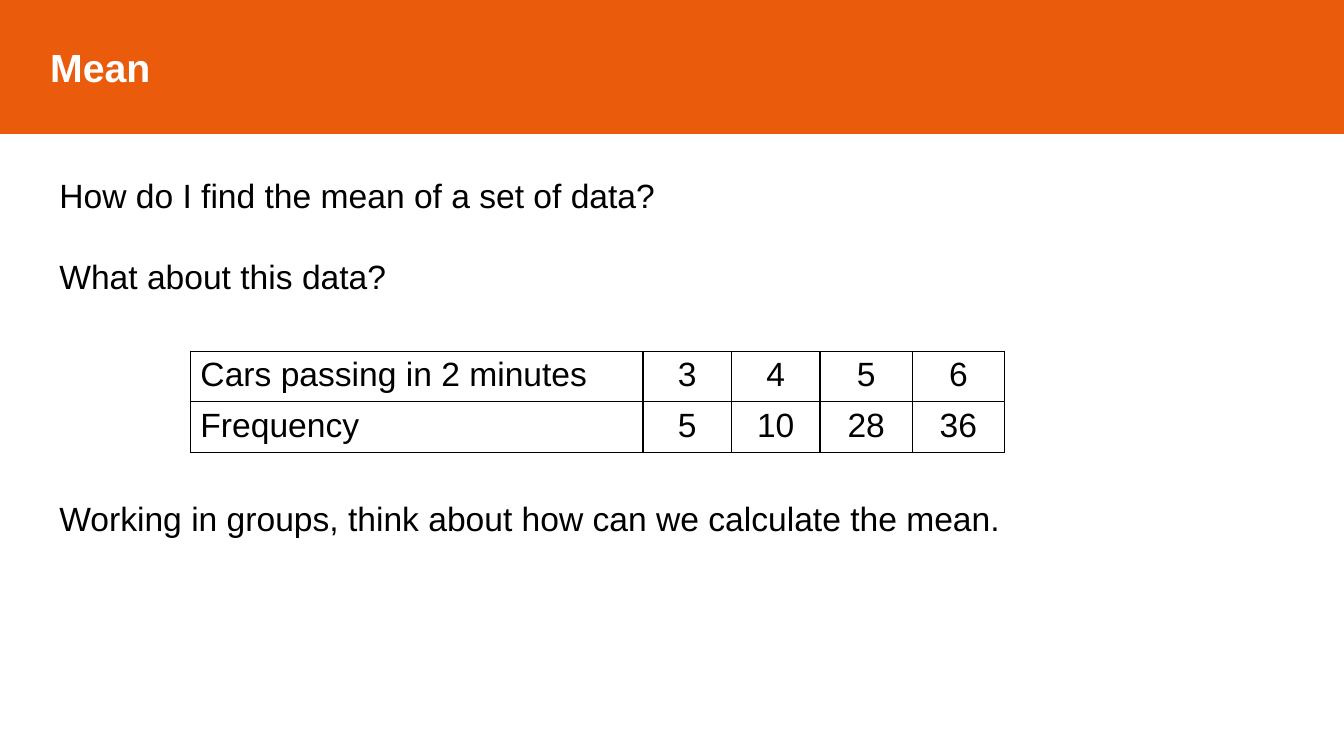
from lxml import etree
from pptx import Presentation
from pptx.dml.color import RGBColor
from pptx.enum.shapes import MSO_SHAPE
from pptx.enum.text import MSO_ANCHOR, MSO_AUTO_SIZE, PP_ALIGN
from pptx.oxml.ns import qn
from pptx.util import Pt

RECTANGLE = MSO_SHAPE.RECTANGLE
MIDDLE = MSO_ANCHOR.MIDDLE
GROW = MSO_AUTO_SIZE.SHAPE_TO_FIT_TEXT
LEFT, CENTER = PP_ALIGN.LEFT, PP_ALIGN.CENTER

COLORS = {"banner": "EA5B0C", "paper": "FFFFFF", "ink": "000000"}
BODY = {"name": "Arial", "size": Pt(24)}
HEADING = {"name": "Arial", "size": Pt(28), "bold": True}

QUESTIONS = [
    ("How do I find the mean of a set of data?", 0),
    ("What about this data?", 28.7),
    ("Working in groups, think about how can we calculate the mean.", 144),
]
FREQUENCIES = [
    ("Cars passing in 2 minutes", "3", "4", "5", "6"),
    ("Frequency", "5", "10", "28", "36"),
]
COLUMN_WIDTHS = [323.3, 63.2, 63.2, 66.2, 65.4]
ROW_HEIGHT = 29.5


def rgb(color):
    """Return the named colour."""
    return RGBColor.from_string(COLORS[color])


def write(paragraph, wording, style, color, align=LEFT):
    """Put one formatted run into a paragraph."""
    paragraph.alignment = align
    run = paragraph.add_run()
    run.text = wording
    for attribute, value in style.items():
        setattr(run.font, attribute, value)
    run.font.color.rgb = rgb(color)


def add_banner(slide, title):
    """Add the full-width title band."""
    banner = slide.shapes.add_shape(RECTANGLE, 0, 0, Pt(960), Pt(95))
    banner.shadow.inherit = False
    banner.fill.solid()
    banner.fill.fore_color.rgb = rgb("banner")
    banner.line.color.rgb = rgb("banner")
    banner.line.width = Pt(1)
    banner.text_frame.vertical_anchor = MIDDLE
    heading = banner.text_frame.paragraphs[0]
    write(heading, title, HEADING, "paper")
    heading._p.get_or_add_pPr().set("marL", str(Pt(28.8)))


def add_questions(slide, questions):
    """Add the prompts, each with its gap above."""
    body = slide.shapes.add_textbox(Pt(35.3), Pt(121.7), Pt(907), Pt(385)).text_frame
    body.word_wrap = True
    body.auto_size = GROW
    for index, (wording, gap) in enumerate(questions):
        prompt = body.add_paragraph() if index else body.paragraphs[0]
        prompt.space_before = Pt(gap)
        write(prompt, wording, BODY, "ink")


def add_borders(cell):
    """Draw a thin line on all four sides of a cell."""
    properties = cell._tc.get_or_add_tcPr()
    for side in ("lnL", "lnR", "lnT", "lnB"):
        border = etree.SubElement(properties, qn(f"a:{side}"), w=str(Pt(1)))
        paint = etree.SubElement(border, qn("a:solidFill"))
        etree.SubElement(paint, qn("a:srgbClr"), val=COLORS["ink"])


def add_frequency_table(slide, rows):
    """Add the bordered table of values and frequencies."""
    table = slide.shapes.add_table(
        len(rows), len(COLUMN_WIDTHS), Pt(136), Pt(251), Pt(580.3), Pt(72)
    ).table
    for column, width in zip(table.columns, COLUMN_WIDTHS):
        column.width = Pt(width)
    for row, entries in zip(table.rows, rows):
        row.height = Pt(ROW_HEIGHT)
        for position, (cell, entry) in enumerate(zip(row.cells, entries)):
            add_borders(cell)
            cell.fill.solid()
            cell.fill.fore_color.rgb = rgb("paper")
            align = CENTER if position else LEFT
            write(cell.text_frame.paragraphs[0], entry, BODY, "ink", align)


def main():
    """Build and save the slide."""
    deck = Presentation()
    deck.slide_width, deck.slide_height = Pt(960), Pt(540)
    slide = deck.slides.add_slide(deck.slide_layouts[6])
    add_banner(slide, "Mean")
    add_questions(slide, QUESTIONS)
    add_frequency_table(slide, FREQUENCIES)
    deck.save("out.pptx")


if __name__ == "__main__":
    main()
